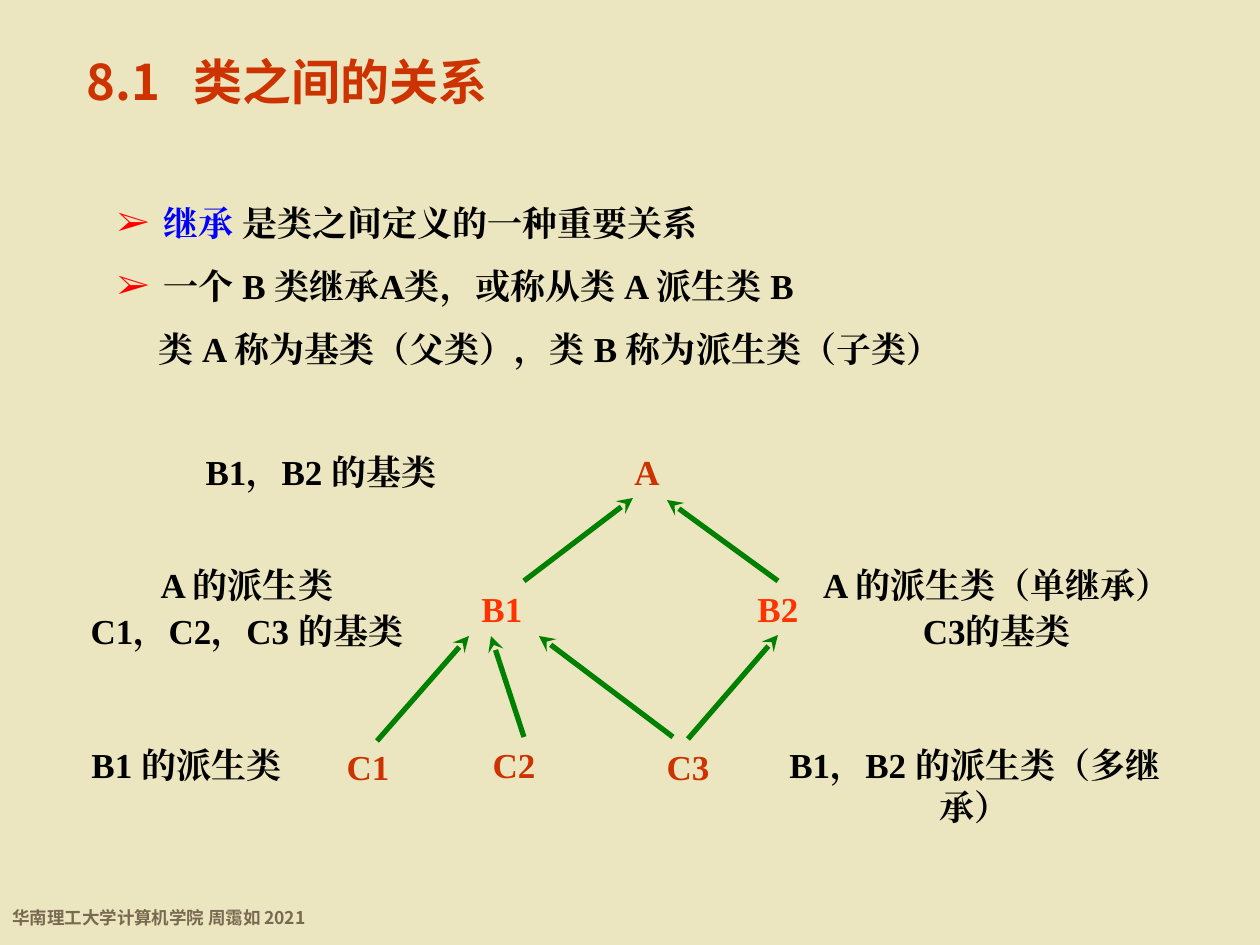
"""Slide on the relations between classes, with an inheritance graph."""
from lxml.etree import SubElement
from pptx import Presentation
from pptx.dml.color import RGBColor as RGB
from pptx.enum.shapes import MSO_CONNECTOR as LINK
from pptx.enum.text import MSO_ANCHOR as ANCHOR, MSO_AUTO_SIZE as AUTO, PP_ALIGN as ALIGN
from pptx.oxml.ns import qn
from pptx.util import Pt

PX = 914400 // 126
COLORS = {"back": "ECE6C0", "title": "CC3300", "mid": "FF3300", "foot": "786950",
          "key": "0000FF", "mark": "FF0000", "text": "000000", "line": "008000"}
SANS, SERIF = "Noto Sans CJK SC", "Times New Roman"

deck = Presentation()
deck.slide_width, deck.slide_height = 1260 * PX, 945 * PX
slide = deck.slides.add_slide(deck.slide_layouts[6])
slide.background.fill.solid()
slide.background.fill.fore_color.rgb = RGB.from_string(COLORS["back"])


def add_text(spot, *paras, size=20, font=SERIF, color="text", align=ALIGN.LEFT,
             space=None, wrap=False, anchor=ANCHOR.TOP):
    """Add a box; each paragraph is a string or a list of (text, color) runs."""
    box = slide.shapes.add_textbox(*[n * PX for n in spot])
    frame = box.text_frame
    frame.word_wrap, frame.vertical_anchor = wrap, anchor
    frame.auto_size = AUTO.SHAPE_TO_FIT_TEXT
    for i, para in enumerate(paras):
        line = frame.add_paragraph() if i else frame.paragraphs[0]
        line.alignment, line.line_spacing = align, space
        for words, tint in [(para, color)] if isinstance(para, str) else para:
            run = line.add_run()
            run.text = words
            run.font.size, run.font.name, run.font.bold = Pt(size), font, True
            run.font.color.rgb = RGB.from_string(COLORS[tint])
            SubElement(run.font._element, qn("a:ea"), typeface=font)
    return box


add_text((0, 892, 335, 43), "华南理工大学计算机学院 周霭如 2021",
         size=10, font=SANS, color="foot", space=1.4)
title = add_text((74, 45, 766, 84), "8.1\t类之间的关系",
                 size=28, font=SANS, color="title", wrap=True)
props = title.text_frame.paragraphs[0]._p.get_or_add_pPr()
tabs = SubElement(props, qn("a:tabLst"))
SubElement(tabs, qn("a:tab"), pos=str(107 * PX), algn="l")

body = add_text((105, 174, 984, 202),
                [("继承", "key"), (" 是类之间定义的一种重要关系", "text")],
                "一个 B 类继承A类，或称从类 A 派生类 B",
                "类 A 称为基类（父类），类 B 称为派生类（子类）",
                space=1.5, wrap=True, anchor=ANCHOR.MIDDLE)
for para, left, mark in zip(body.text_frame.paragraphs, (46, 46, 41), "➢➢ "):
    props = para._p.get_or_add_pPr()
    props.set("marL", str(left * PX))
    if mark == "➢":
        props.set("indent", str(-left * PX))
        tint = SubElement(props, qn("a:buClr"))
        SubElement(tint, qn("a:srgbClr"), val=COLORS["mark"])
        SubElement(props, qn("a:buFont"), typeface="Times New Roman")
        SubElement(props, qn("a:buChar"), char=mark)

nodes = {}
for name, x, y, w, color in [("A", 622, 444, 50, "title"),
                             ("B1", 469, 581, 66, "mid"), ("B2", 745, 581, 66, "mid"),
                             ("C1", 334, 739, 68, "title"), ("C2", 480, 737, 68, "title"),
                             ("C3", 654, 739, 68, "title")]:
    nodes[name] = add_text((x, y, w, 54), name, color=color,
                           align=ALIGN.CENTER, anchor=ANCHOR.MIDDLE)

for spot, paras, space in [
        ((193, 444, 256, 54), ["B1，B2 的基类"], None),
        ((78, 553, 338, 105), ["A 的派生类", "C1，C2，C3 的基类"], 1.1),
        ((810, 553, 374, 105), ["A 的派生类（单继承）", "C3的基类"], 1.1),
        ((742, 737, 466, 54), ["B1，B2 的派生类（多继承）"], None),
        ((79, 737, 215, 54), ["B1 的派生类"], None)]:
    add_text(spot, *paras, align=ALIGN.CENTER, space=space)

for ends, start, stop in [((377, 741, 469, 636), None, None),
                          ((524, 737, 491, 636), None, None),
                          ((673, 737, 539, 636), None, None),
                          ((690, 737, 775, 636), "C3", "B2"),
                          ((524, 581, 633, 498), None, None),
                          ((775, 583, 667, 500), "B2", None)]:
    link = slide.shapes.add_connector(LINK.STRAIGHT, *[n * PX for n in ends])
    if start:
        link.begin_connect(nodes[start], 0)
    if stop:
        link.end_connect(nodes[stop], 2)
    link.line.color.rgb = RGB.from_string(COLORS["line"])
    link.line.width = Pt(3)
    SubElement(link.line._get_or_add_ln(), qn("a:tailEnd"), type="stealth")
    SubElement(link._element.spPr, qn("a:effectLst"))

deck.save("out.pptx")
